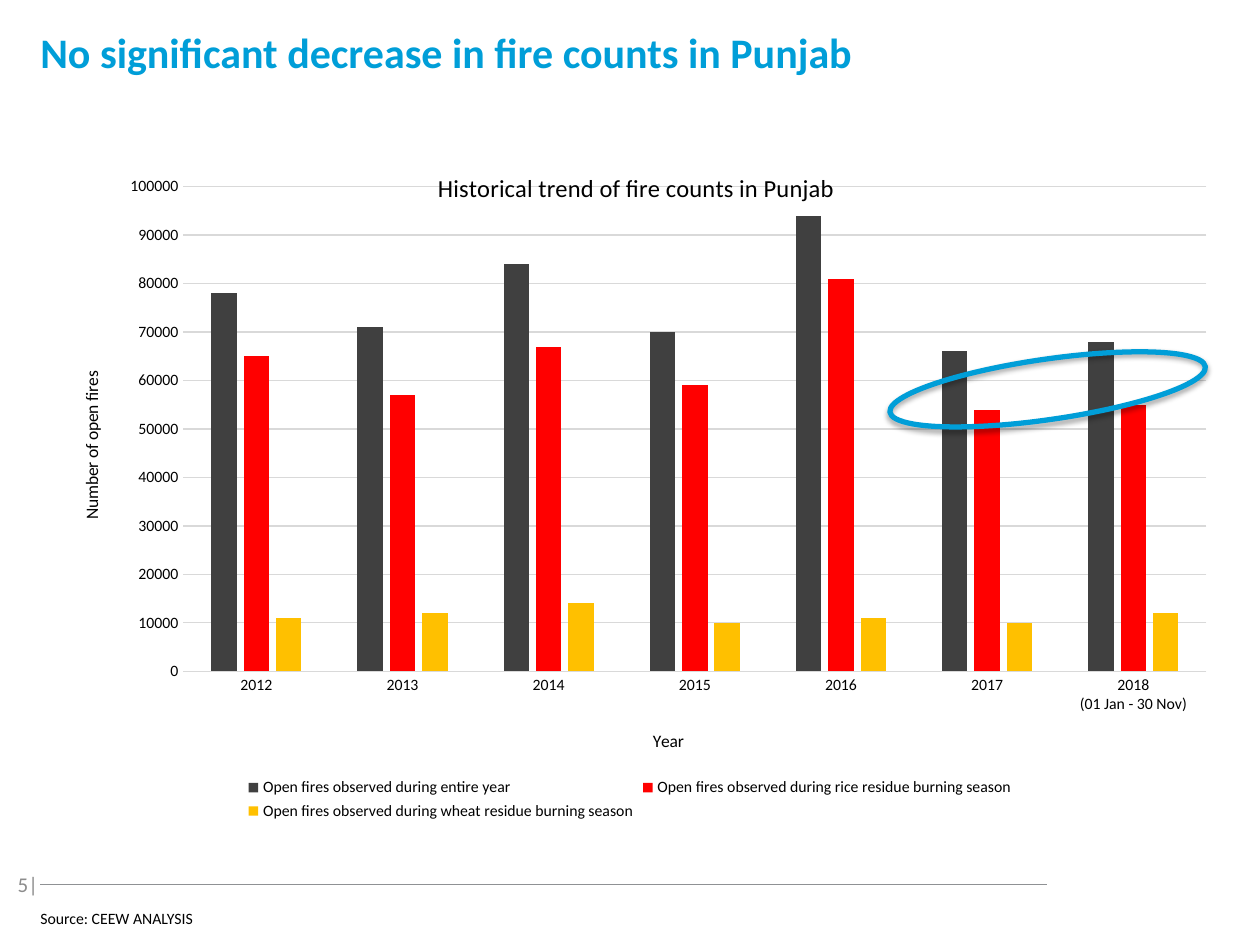
from dataclasses import dataclass

from pptx import Presentation
from pptx.chart.data import CategoryChartData
from pptx.dml.color import RGBColor
from pptx.enum.chart import XL_CHART_TYPE, XL_LEGEND_POSITION, XL_TICK_MARK
from pptx.enum.shapes import MSO_CONNECTOR, MSO_SHAPE
from pptx.enum.text import MSO_ANCHOR, PP_ALIGN
from pptx.oxml import parse_xml
from pptx.oxml.ns import nsdecls, qn
from pptx.util import Inches, Pt

BARS = XL_CHART_TYPE.COLUMN_CLUSTERED
BOTTOM = XL_LEGEND_POSITION.BOTTOM
NO_TICK = XL_TICK_MARK.NONE
LINE, OVAL = MSO_CONNECTOR.STRAIGHT, MSO_SHAPE.OVAL
TOP, MIDDLE = MSO_ANCHOR.TOP, MSO_ANCHOR.MIDDLE
LEFT, RIGHT = PP_ALIGN.LEFT, PP_ALIGN.RIGHT


@dataclass(frozen=True)
class Theme:
    font: str = "Calibri"
    blue: str = "009ED8"
    black: str = "000000"
    gray: str = "8C8C8C"
    rule: str = "8F9194"
    grid: str = "D9D9D9"
    head: int = 24
    title: int = 14
    page: int = 12
    axis: int = 10
    small: int = 9
    thin: float = 0.75
    thick: int = 3


THEME = Theme()
WIDE, HIGH = 10, 7.5
EDGE, SPAN = 0.32, 7.99  # left margin and footer width

YEARS = ["2012", "2013", "2014", "2015", "2016", "2017",
         "2018\n(01 Jan - 30 Nov)"]
SERIES = [
    ("Open fires observed during entire year", "404040",
     (78000, 71000, 84000, 70000, 94000, 66000, 68000)),
    ("Open fires observed during rice residue burning season", "FF0000",
     (65000, 57000, 67000, 59000, 81000, 54000, 55000)),
    ("Open fires observed during wheat residue burning season", "FFC000",
     (11000, 12000, 14000, 10000, 11000, 10000, 12000)),
]


def put(item, **values):
    for name, value in values.items():
        setattr(item, name, value)


def style(font, size, color=THEME.black, bold=False):
    put(font, name=THEME.font, size=Pt(size), bold=bold)
    font.color.rgb = RGBColor.from_string(color)


def stroke(line, color, width):
    line.color.rgb = RGBColor.from_string(color)
    line.width = Pt(width)


def place(shape, box):
    names = ("left", "top", "width", "height")
    put(shape, **dict(zip(names, map(Inches, box))))


def write(shape, text, size, color, align=LEFT, anchor=MIDDLE, bold=False, pad=0):
    frame = shape.text_frame
    put(frame, word_wrap=True, vertical_anchor=anchor, margin_left=Inches(pad),
        margin_right=Inches(pad), margin_top=Inches(0.05),
        margin_bottom=Inches(0.05))
    para = frame.paragraphs[0]
    para.text, para.alignment = text, align
    style(para.runs[0].font, size, color, bold)


def label(slide, box, *args, **kinds):
    write(slide.shapes.add_textbox(*map(Inches, box)), *args, **kinds)


def layout(parent, index, inner=False, **shares):
    """Set a chart part's place as shares of the chart."""
    for old in parent.findall(qn("c:layout")):
        parent.remove(old)
    target = '<c:layoutTarget val="inner"/>' if inner else ""
    modes = '<c:xMode val="edge"/><c:yMode val="edge"/>'
    sizes = "".join(f'<c:{k} val="{v}"/>' for k, v in shares.items())
    parent.insert(index, parse_xml(
        f'<c:layout {nsdecls("c")}><c:manualLayout>{target}{modes}{sizes}'
        "</c:manualLayout></c:layout>"))


def caption(owner, text, size):
    frame = owner.text_frame
    frame.text = text
    style(frame.paragraphs[0].runs[0].font, size)


def add_chart(slide, box):
    data = CategoryChartData()
    data.categories = YEARS
    for name, _, values in SERIES:
        data.add_series(name, values)
    chart = slide.shapes.add_chart(BARS, *map(Inches, box), data).chart
    style(chart.font, THEME.axis)

    # Bars
    plot = chart.plots[0]
    put(plot, gap_width=219, overlap=-27, vary_by_categories=False)
    for bar, (_, color, _) in zip(plot.series, SERIES):
        bar.format.fill.solid()
        bar.format.fill.fore_color.rgb = RGBColor.from_string(color)

    # Axes
    years, count = chart.category_axis, chart.value_axis
    for axis, text in ((years, "Year"), (count, "Number of open fires")):
        put(axis, major_tick_mark=NO_TICK, minor_tick_mark=NO_TICK)
        style(axis.tick_labels.font, THEME.small)
        caption(axis.axis_title, text, THEME.axis)
    stroke(years.format.line, THEME.grid, THEME.thin)
    put(count, minimum_scale=0, maximum_scale=100000, major_unit=10000,
        has_major_gridlines=True)
    count.format.line.fill.background()
    stroke(count.major_gridlines.format.line, THEME.grid, THEME.thin)

    # Legend and title, which lies over the plot
    chart.has_legend = True
    put(chart.legend, position=BOTTOM, include_in_layout=False)
    style(chart.legend.font, THEME.small)
    caption(chart.chart_title, "Historical trend of fire counts in Punjab",
            THEME.title)
    root = chart._chartSpace.chart
    title = root.find(qn("c:title"))
    layout(title, 1, x=0.33, y=0.04)
    title.find(qn("c:overlay")).set("val", "1")
    layout(root.plotArea, 0, inner=True, x=0.113, y=0.07, w=0.887, h=0.706)


def add_ring(slide, box, turn):
    ring = slide.shapes.add_shape(OVAL, *map(Inches, box))
    ring.rotation = turn
    ring.fill.background()
    stroke(ring.line, THEME.blue, THEME.thick)
    ring.shadow.inherit = False
    ring._element.spPr.find(qn("a:effectLst")).append(parse_xml(
        f'<a:outerShdw {nsdecls("a")} blurRad="{Pt(3.1)}" dist="{Pt(1.8)}" '
        'dir="5400000" rotWithShape="0"><a:srgbClr val="000000">'
        '<a:alpha val="35000"/></a:srgbClr></a:outerShdw>'))


def add_rule(slide, left, top, width):
    ends = map(Inches, (left, top, left + width, top))
    rule = slide.shapes.add_connector(LINE, *ends)
    stroke(rule.line, THEME.rule, THEME.thin)
    rule._element.spPr.append(parse_xml(f'<a:effectLst {nsdecls("a")}/>'))


def main():
    deck = Presentation()
    put(deck, slide_width=Inches(WIDE), slide_height=Inches(HIGH))
    slide = deck.slides.add_slide(deck.slide_layouts[5])

    # Heading
    head = slide.shapes.title
    place(head, (EDGE, 0.16, 9.26, 0.87))
    write(head, "No significant decrease in fire counts in Punjab",
          THEME.head, THEME.blue, anchor=TOP, bold=True)

    # Footer
    add_rule(slide, EDGE, 7.02, SPAN)
    label(slide, (EDGE, 7.08, SPAN, 0.42), "Source: CEEW ANALYSIS",
          THEME.small, THEME.black)
    label(slide, (-0.23, 6.82, 0.63, 0.4), "5|", THEME.page, THEME.gray,
          align=RIGHT, pad=0.1)

    # Chart and its highlight
    add_chart(slide, (0.42, 1.1, 9.16, 5.45))
    add_ring(slide, (7.05, 2.85, 2.53, 0.48), 351.8)
    deck.save("out.pptx")


if __name__ == "__main__":
    main()
